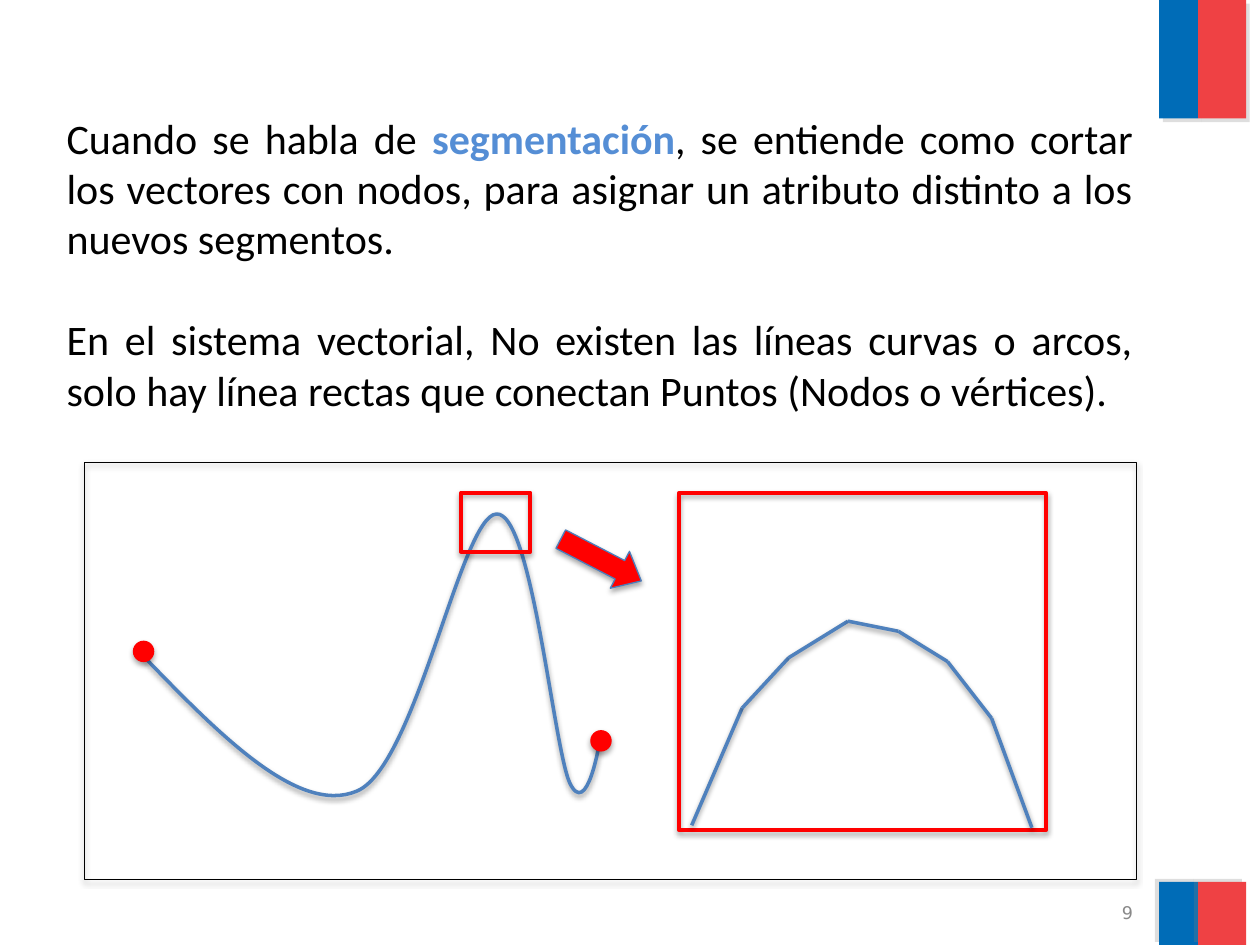
from itertools import pairwise

from lxml import etree
from pptx import Presentation
from pptx.dml.color import RGBColor
from pptx.enum.shapes import MSO_CONNECTOR, MSO_SHAPE
from pptx.enum.text import MSO_ANCHOR, PP_ALIGN
from pptx.oxml.ns import qn
from pptx.util import Inches, Pt

RECTANGLE, OVAL, ARROW = MSO_SHAPE.RECTANGLE, MSO_SHAPE.OVAL, MSO_SHAPE.RIGHT_ARROW
STRAIGHT = MSO_CONNECTOR.STRAIGHT
JUSTIFY, RIGHT = PP_ALIGN.JUSTIFY, PP_ALIGN.RIGHT
TOP, MIDDLE = MSO_ANCHOR.TOP, MSO_ANCHOR.MIDDLE

BLACK = RGBColor(0, 0, 0)
RED = RGBColor(0xFF, 0, 0)
FLAG_BLUE = RGBColor(0, 0x6C, 0xB7)
FLAG_RED = RGBColor(0xEF, 0x41, 0x44)
GRAY = RGBColor(0x80, 0x80, 0x80)
NUMBER_GRAY = RGBColor(0x89, 0x89, 0x89)
CURVE_BLUE = RGBColor(0x4F, 0x81, 0xBD)
ARROW_EDGE = RGBColor(0x4B, 0x7E, 0xBC)
TERM_BLUE = RGBColor(0x55, 0x8E, 0xD5)

SHAPE_SHADOW = (BLACK, 35, 3.1, 1.8, 90)
LINE_SHADOW = (BLACK, 38, 3.1, 1.6, 90)

CURVE = [(1.14, 5.21), (1.75, 5.84), (2.37, 6.47), (2.83, 6.28),
         (3.3, 6.09), (3.66, 4.09), (3.94, 4.08),
         (4.22, 4.06), (4.39, 5.91), (4.52, 6.21),
         (4.66, 6.51), (4.76, 5.88), (4.76, 5.88)]
ARC_NODES = [(5.49, 6.55), (5.89, 5.62), (6.26, 5.22), (6.73, 4.93),
             (7.13, 5.01), (7.52, 5.25), (7.87, 5.7), (8.19, 6.57)]
PARAGRAPHS = [
    [("Cuando se habla de ", False), ("segmentación", True),
     (", se entiende como cortar los vectores con nodos, para asignar "
      "un atributo distinto a los nuevos segmentos.", False)],
    [("En el sistema vectorial, No existen las líneas curvas o arcos, "
      "solo hay línea rectas que conectan Puntos (Nodos o vértices).", False)],
]


def add_shadow(shape, color, opacity, blur, distance, angle):
    """Give a shape or connector an outer shadow."""
    effects = etree.SubElement(shape._element.spPr, qn("a:effectLst"))
    shadow = etree.SubElement(
        effects, qn("a:outerShdw"), blurRad=str(Pt(blur)), dist=str(Pt(distance)),
        dir=str(angle * 60000), rotWithShape="0")
    tint = etree.SubElement(shadow, qn("a:srgbClr"), val=str(color))
    etree.SubElement(tint, qn("a:alpha"), val=str(opacity * 1000))


def set_line(shape, color, width):
    """Set the line colour and width."""
    shape.line.color.rgb = color
    shape.line.width = Pt(width)


def add_figure(slide, kind, place, fill=None, edge=None, width=0.75, shadow=SHAPE_SHADOW):
    """Add a preset shape with optional fill and outline."""
    shape = slide.shapes.add_shape(kind, *map(Inches, place))
    if fill is None:
        shape.fill.background()
    else:
        shape.fill.solid()
        shape.fill.fore_color.rgb = fill
    if edge is None:
        shape.line.fill.background()
    else:
        set_line(shape, edge, width)
    add_shadow(shape, *shadow)
    return shape


def add_curve(slide, points):
    """Add an open outline of cubic curves through every third point."""
    start, *controls = [(Inches(x), Inches(y)) for x, y in points]
    builder = slide.shapes.build_freeform(*start)
    builder.add_line_segments(controls, close=False)
    curve = builder.convert_to_shape()
    outline = next(curve._element.iter(qn("a:path")))
    segments = outline.findall(qn("a:lnTo"))
    for first in range(0, len(segments), 3):
        bezier = etree.SubElement(outline, qn("a:cubicBezTo"))
        for segment in segments[first:first + 3]:
            bezier.append(segment[0])
            outline.remove(segment)
    curve.fill.background()
    set_line(curve, CURVE_BLUE, 2)
    add_shadow(curve, *LINE_SHADOW)


def add_arc(slide, nodes):
    """Join neighbouring nodes with straight connectors."""
    for start, end in pairwise(nodes):
        segment = slide.shapes.add_connector(STRAIGHT, *map(Inches, start + end))
        set_line(segment, CURVE_BLUE, 2)
        add_shadow(segment, *LINE_SHADOW)


def add_text(slide, place, paragraphs, font, size, color, align, anchor=TOP):
    """Add a wrapped text box whose marked runs stand out as terms."""
    box = slide.shapes.add_textbox(*map(Inches, place))
    frame = box.text_frame
    frame.word_wrap = True
    frame.vertical_anchor = anchor
    for index, spans in enumerate(paragraphs):
        para = frame.add_paragraph() if index else frame.paragraphs[0]
        para.alignment = align
        if index:
            para.space_before = Pt(29)
        para.font.name = font
        para.font.size = Pt(size)
        para.font.color.rgb = color
        for text, is_term in spans:
            span = para.add_run()
            span.text = text
            if is_term:
                span.font.bold = True
                span.font.color.rgb = TERM_BLUE


def add_flag(slide, top, height, angle):
    """Add the two-colour band at the right edge."""
    for left, width, color in ((9.2, 0.31, FLAG_BLUE), (9.51, 0.38, FLAG_RED)):
        add_figure(slide, RECTANGLE, (left, top, width, height), color,
                   shadow=(GRAY, 25, 0, 3, angle))


def add_diagram(slide):
    """Draw the curve, its magnified straight segments and the markers."""
    add_curve(slide, CURVE)
    for place in ((3.66, 3.91, 0.55, 0.47), (5.39, 3.91, 2.91, 2.68)):
        add_figure(slide, RECTANGLE, place, edge=RED, width=2.25)
    add_arc(slide, ARC_NODES)
    add_figure(slide, RECTANGLE, (0.67, 3.67, 8.35, 3.31), edge=BLACK)
    for left, top in ((1.06, 5.09), (4.69, 5.8)):
        add_figure(slide, OVAL, (left, top, 0.16, 0.16), RED, RED)
    arrow = add_figure(slide, ARROW, (4.41, 4.28, 0.72, 0.33), RED, ARROW_EDGE)
    arrow.adjustments[1] = 0.58
    arrow.rotation = 27.4


def main():
    """Build the slide and save the deck."""
    deck = Presentation()
    deck.slide_width, deck.slide_height = Inches(10), Inches(7.5)
    page = deck.slides.add_slide(deck.slide_layouts[6])
    add_flag(page, 0, 0.94, 45)
    add_flag(page, 7, 0.5, 215)
    add_text(page, (6.76, 7.14, 2.33, 0.21), [[("9", False)]],
             "DejaVu Sans", 10, NUMBER_GRAY, RIGHT, MIDDLE)
    add_text(page, (0.43, 0.84, 8.66, 2.93), PARAGRAPHS, "Calibri", 24, BLACK, JUSTIFY)
    add_diagram(page)
    deck.save("out.pptx")


if __name__ == "__main__":
    main()
